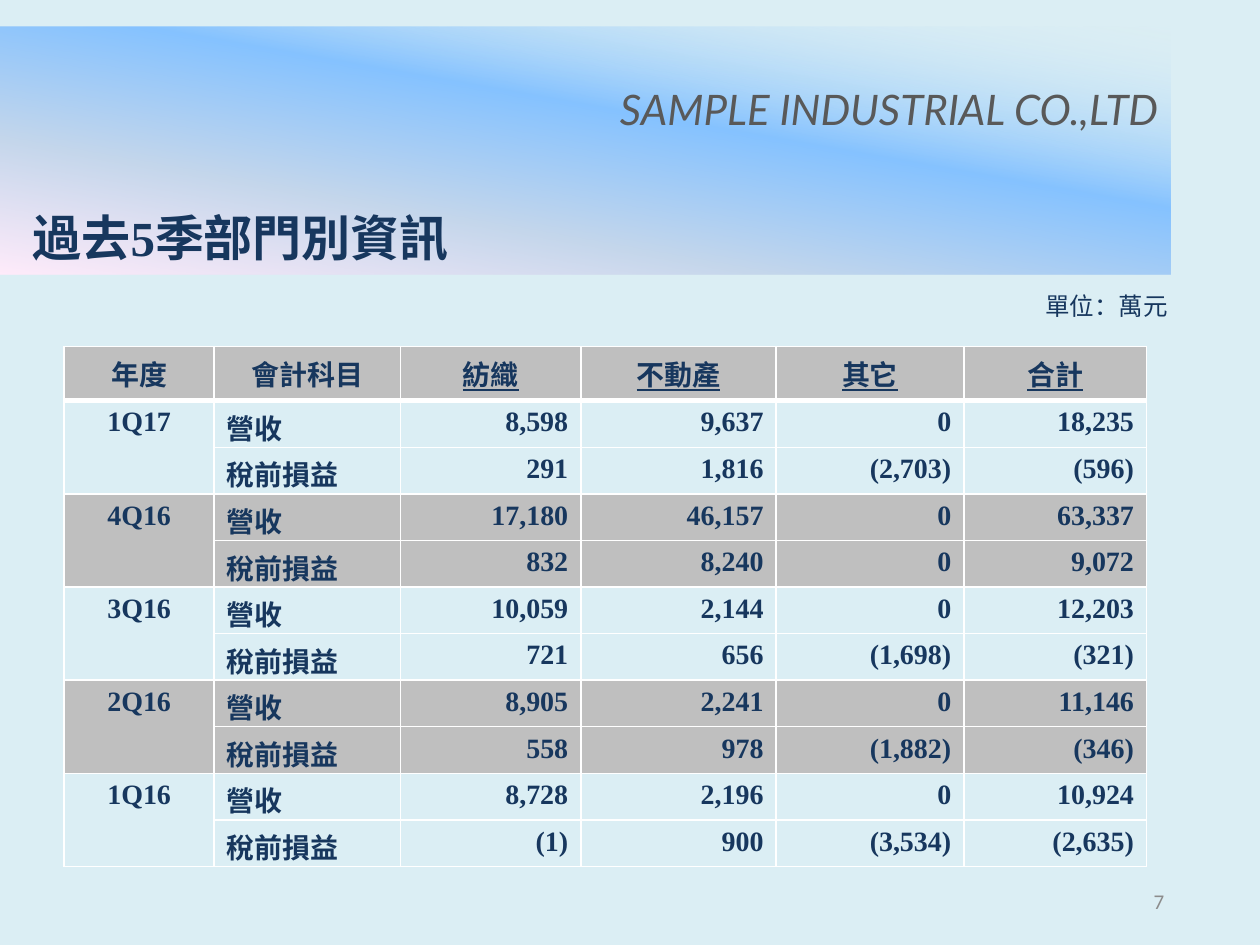
from lxml.etree import SubElement
from pptx import Presentation
from pptx.dml.color import RGBColor
from pptx.enum.shapes import MSO_SHAPE
from pptx.enum.text import MSO_ANCHOR, PP_ALIGN
from pptx.oxml import parse_xml
from pptx.oxml.ns import nsdecls, qn
from pptx.util import Inches, Pt

PALE = RGBColor(0xDB, 0xEE, 0xF4)
NAVY = RGBColor(0x17, 0x37, 0x5E)
GREY = RGBColor(0xBF, 0xBF, 0xBF)
WHITE = RGBColor(0xFF, 0xFF, 0xFF)
DARK_GREY = RGBColor(0x59, 0x59, 0x59)
NUMBER_GREY = RGBColor(0x8C, 0x8C, 0x8C)
SKY = RGBColor(0x85, 0xC2, 0xFF)
STEEL = RGBColor(0xC4, 0xD6, 0xEB)
PINK = RGBColor(0xFF, 0xEB, 0xFA)

HEADINGS = ["年度", "會計科目", "紡織", "不動產", "其它", "合計"]
ITEMS = ["營收", "稅前損益"]
QUARTERS = [
    ("1Q17", ["8,598", "9,637", "0", "18,235"], ["291", "1,816", "(2,703)", "(596)"]),
    ("4Q16", ["17,180", "46,157", "0", "63,337"], ["832", "8,240", "0", "9,072"]),
    ("3Q16", ["10,059", "2,144", "0", "12,203"], ["721", "656", "(1,698)", "(321)"]),
    ("2Q16", ["8,905", "2,241", "0", "11,146"], ["558", "978", "(1,882)", "(346)"]),
    ("1Q16", ["8,728", "2,196", "0", "10,924"], ["(1)", "900", "(3,534)", "(2,635)"]),
]
COLUMNS = [1.19, 1.48, 1.43, 1.55, 1.49, 1.45]
HEAD_ROW, BODY_ROW = 0.43, 0.37


def write(tf, text, size, color, align, font="Times New Roman", bold=False):
    tf.word_wrap = True
    p = tf.paragraphs[0]
    p.text = text
    p.alignment = align
    p.font.name, p.font.size, p.font.bold = font, Pt(size), bold
    p.font.color.rgb = color
    return p


def set_borders(cell, bottom):
    """White cell edges, 1 pt except for the given bottom width."""
    tcPr = cell._tc.get_or_add_tcPr()
    for i, (side, width) in enumerate(zip("LRTB", (1, 1, 1, bottom))):
        tcPr.insert(i, parse_xml(
            f'<a:ln{side} {nsdecls("a")} w="{Pt(width)}"><a:solidFill>'
            f'<a:srgbClr val="{WHITE}"/></a:solidFill></a:ln{side}>'))


prs = Presentation()
prs.slide_width, prs.slide_height = Inches(10), Inches(7.5)
s = prs.slides.add_slide(prs.slide_layouts[5])
s.background.fill.solid()
s.background.fill.fore_color.rgb = PALE

# Title over the gradient band
title = s.shapes.title
title.left, title.top, title.width, title.height = (
    Inches(v) for v in (0.16, 1.6, 9.21, 0.66))
title.text_frame.vertical_anchor = MSO_ANCHOR.TOP
write(title.text_frame, "過去5季部門別資訊", 28, NAVY, PP_ALIGN.LEFT, bold=True)

band = s.shapes.add_shape(
    MSO_SHAPE.RECTANGLE, 0, Inches(0.21), Inches(9.29), Inches(1.97))
title.element.addprevious(band.element)
band.shadow.inherit = False
band.line.fill.background()
band.fill.gradient()
band.fill.gradient_angle = 260
gsLst = band.element.spPr.find(qn("a:gradFill")).find(qn("a:gsLst"))
for stop in list(gsLst):
    gsLst.remove(stop)
for share, color in [(0, PALE), (40, SKY), (70, STEEL), (100, PINK)]:
    gs = SubElement(gsLst, qn("a:gs"), pos=str(share * 1000))
    clr = SubElement(gs, qn("a:srgbClr"), val=str(color))
    if share == 0:
        SubElement(clr, qn("a:alpha"), val="0")
tf = band.text_frame
tf.vertical_anchor = MSO_ANCHOR.TOP
tf.margin_top = Inches(0.45)
p = write(tf, "SAMPLE INDUSTRIAL CO.,LTD", 24, DARK_GREY, PP_ALIGN.RIGHT, "Lato")
p.font.italic = True

# Unit note and page number
unit = s.shapes.add_textbox(Inches(7.37), Inches(2.26), Inches(2), Inches(0.38))
write(unit.text_frame, "單位：萬元", 14, NAVY, PP_ALIGN.RIGHT)
number = s.shapes.add_textbox(Inches(7.01), Inches(6.95), Inches(2.33), Inches(0.4))
number.text_frame.vertical_anchor = MSO_ANCHOR.MIDDLE
write(number.text_frame, "7", 12, NUMBER_GREY, PP_ALIGN.RIGHT, "Calibri")

# Table: one header row, then two rows per quarter
rows = [HEADINGS]
for quarter, *figures in QUARTERS:
    for item, values in zip(ITEMS, figures):
        rows.append([quarter if item == ITEMS[0] else "", item, *values])

table = s.shapes.add_table(
    len(rows), len(COLUMNS), Inches(0.51), Inches(2.75), Inches(sum(COLUMNS)),
    Inches(HEAD_ROW + BODY_ROW * (len(rows) - 1))).table
table.horz_banding = False
for column, width in zip(table.columns, COLUMNS):
    column.width = Inches(width)

for r, row in enumerate(rows):
    header = r == 0
    table.rows[r].height = Inches(HEAD_ROW if header else BODY_ROW)
    for c, text in enumerate(row):
        cell = table.cell(r, c)
        cell.margin_top = Inches(0.05)
        cell.margin_bottom = Inches(0.05 if header else 0)
        cell.vertical_anchor = MSO_ANCHOR.MIDDLE if header else MSO_ANCHOR.TOP
        if header or (r - 1) // 2 % 2:
            cell.fill.solid()
            cell.fill.fore_color.rgb = GREY
        else:
            cell.fill.background()
        set_borders(cell, 3 if header else 1)
        if header or c == 0:
            align = PP_ALIGN.CENTER
        else:
            align = PP_ALIGN.JUSTIFY if c == 1 else PP_ALIGN.RIGHT
        if text:
            p = write(cell.text_frame, text, 16, NAVY, align, bold=True)
            p.font.underline = header and c > 1

for r in range(1, len(rows), 2):
    table.cell(r, 0).merge(table.cell(r + 1, 0))

prs.save("out.pptx")
